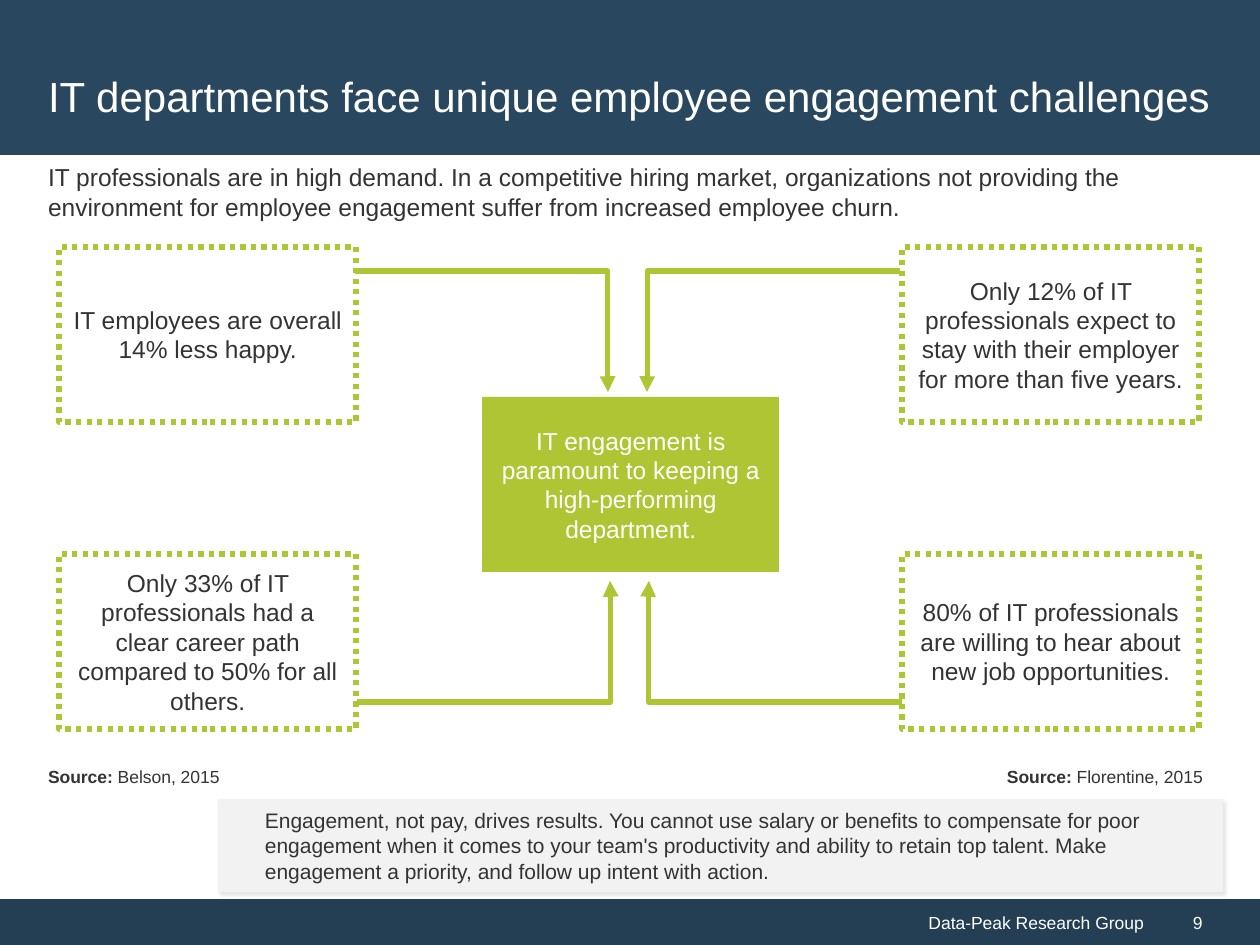
from dataclasses import dataclass
from typing import Optional

from lxml import etree
from pptx import Presentation
from pptx.dml.color import RGBColor
from pptx.enum.dml import MSO_LINE
from pptx.enum.shapes import MSO_CONNECTOR, MSO_SHAPE
from pptx.enum.text import MSO_ANCHOR, MSO_AUTO_SIZE, PP_ALIGN
from pptx.oxml.ns import qn
from pptx.util import Emu, Pt

RECTANGLE = MSO_SHAPE.RECTANGLE
ELBOW = MSO_CONNECTOR.ELBOW
DOTTED = MSO_LINE.ROUND_DOT
TOP, MIDDLE = MSO_ANCHOR.TOP, MSO_ANCHOR.MIDDLE
LEFT, CENTER, RIGHT = PP_ALIGN.LEFT, PP_ALIGN.CENTER, PP_ALIGN.RIGHT
NO_AUTOFIT = MSO_AUTO_SIZE.NONE

EMU_PER_PX = 914400 / 126
SLIDE_WIDTH, SLIDE_HEIGHT = 1260, 945
TITLE_ONLY_LAYOUT = 5
FONT = "Arial"
NAVY, DARK_NAVY, GREEN = "29475F", "243F54", "B0C534"
TEXT, WHITE, PALE_GRAY, BLACK = "333333", "FFFFFF", "F2F2F2", "000000"
LINE_WIDTH = 3
BOX_WIDTH, BOX_HEIGHT = 297, 175
INSET = 13


@dataclass
class Run:
    text: str
    bold: bool = False


@dataclass
class Box:
    left: int
    top: int
    width: int
    height: int
    runs: tuple[Run, ...] = ()
    size: int = 14
    color: str = TEXT
    fill: Optional[str] = None
    outline: Optional[str] = None
    align: PP_ALIGN = LEFT
    anchor: MSO_ANCHOR = MIDDLE
    left_inset: int = INSET


@dataclass
class Arrow:
    start: tuple[int, int]
    end: tuple[int, int]
    bend: int  # thousandths of a percent of the width


def px(length: int) -> Emu:
    return Emu(round(length * EMU_PER_PX))


def rgb(color: str) -> RGBColor:
    return RGBColor.from_string(color)


def place(shape, box: Box) -> None:
    shape.left, shape.top = px(box.left), px(box.top)
    shape.width, shape.height = px(box.width), px(box.height)


def write_text(shape, box: Box) -> None:
    frame = shape.text_frame
    frame.word_wrap = True
    frame.auto_size = NO_AUTOFIT
    frame.vertical_anchor = box.anchor
    frame.margin_left = px(box.left_inset)
    paragraph = frame.paragraphs[0]
    paragraph.alignment = box.align
    for item in box.runs:
        run = paragraph.add_run()
        run.text = item.text
        run.font.name = FONT
        run.font.size = Pt(box.size)
        run.font.bold = item.bold
        run.font.color.rgb = rgb(box.color)


def add_box(slide, box: Box):
    shape = slide.shapes.add_shape(
        RECTANGLE, px(box.left), px(box.top), px(box.width), px(box.height))
    shape.shadow.inherit = False
    if box.fill:
        shape.fill.solid()
        shape.fill.fore_color.rgb = rgb(box.fill)
    else:
        shape.fill.background()
    if box.outline:
        shape.line.color.rgb = rgb(box.outline)
        shape.line.width = Pt(LINE_WIDTH)
        shape.line.dash_style = DOTTED
    else:
        shape.line.fill.background()
    write_text(shape, box)
    return shape


def add_label(slide, box: Box) -> None:
    label = slide.shapes.add_textbox(
        px(box.left), px(box.top), px(box.width), px(box.height))
    write_text(label, box)


def add_arrow(slide, arrow: Arrow) -> None:
    connector = slide.shapes.add_connector(
        ELBOW, *(px(value) for value in arrow.start + arrow.end))
    connector.line.color.rgb = rgb(GREEN)
    connector.line.width = Pt(LINE_WIDTH)
    properties = connector.element.spPr
    line = properties.find(qn("a:ln"))
    etree.SubElement(line, qn("a:tailEnd"), type="triangle")
    etree.SubElement(properties, qn("a:effectLst"))
    adjustments = properties.find(qn("a:prstGeom")).find(qn("a:avLst"))
    etree.SubElement(adjustments, qn("a:gd"), name="adj1",
                     fmla=f"val {arrow.bend}")


def add_soft_shadow(shape) -> None:
    effects = shape.element.spPr.find(qn("a:effectLst"))
    shadow = etree.SubElement(effects, qn("a:outerShdw"), blurRad="25400",
                              dist="25400", dir="2700000", algn="tl",
                              rotWithShape="0")
    color = etree.SubElement(shadow, qn("a:srgbClr"), val=BLACK)
    etree.SubElement(color, qn("a:alpha"), val="10000")


def fact(left: int, top: int, text: str) -> Box:
    return Box(left, top, BOX_WIDTH, BOX_HEIGHT, (Run(text),),
               outline=GREEN, align=CENTER)


def source(left: int, width: int, name: str) -> Box:
    return Box(left, 760, width, 34, (Run("Source:", True), Run(f" {name}")),
               size=10, anchor=TOP)


TITLE_BAND = Box(0, 0, SLIDE_WIDTH, 155, fill=NAVY)
TITLE = Box(35, 35, 1210, 121,
            (Run("IT departments face unique employee engagement challenges"),),
            size=24, color=WHITE)
FOOTER = (
    Box(0, 899, 1156, 46, (Run("Data-Peak Research Group"),), size=10,
        color=WHITE, fill=DARK_NAVY, align=RIGHT),
    Box(1156, 899, 104, 46, (Run("9"),), size=10, color=WHITE,
        fill=DARK_NAVY, left_inset=37),
)
INTRO = Box(35, 156, 1188, 72, (Run(
    "IT professionals are in high demand. In a competitive hiring market, "
    "organizations not providing the environment for employee engagement "
    "suffer from increased employee churn."),), anchor=TOP)
ARROWS = (
    Arrow((357, 702), (610, 581), 100300),
    Arrow((355, 271), (608, 392), 99900),
    Arrow((900, 271), (647, 392), 99900),
    Arrow((902, 702), (649, 581), 100300),
)
FACTS = (
    fact(59, 554, "Only 33% of IT professionals had a clear career path "
                  "compared to 50% for all others."),
    fact(59, 247, "IT employees are overall 14% less happy."),
    fact(902, 554, "80% of IT professionals are willing to hear about "
                   "new job opportunities."),
    fact(902, 247, "Only 12% of IT professionals expect to stay with their "
                   "employer for more than five years. "),
)
CONCLUSION = Box(482, 397, BOX_WIDTH, BOX_HEIGHT, (Run(
    "IT engagement is paramount to keeping a high-performing department."),),
    color=WHITE, fill=GREEN, align=CENTER)
SOURCES = (source(35, 198, "Belson, 2015"),
           source(994, 229, "Florentine, 2015"))
CALLOUT = Box(218, 799, 1005, 93, (Run(
    "Engagement, not pay, drives results. You cannot use salary or benefits "
    "to compensate for poor engagement when it comes to your team's "
    "productivity and ability to retain top talent. Make engagement a "
    "priority, and follow up intent with action."),),
    size=12, fill=PALE_GRAY, left_inset=47)


def main() -> None:
    presentation = Presentation()
    presentation.slide_width = px(SLIDE_WIDTH)
    presentation.slide_height = px(SLIDE_HEIGHT)
    slide = presentation.slides.add_slide(
        presentation.slide_layouts[TITLE_ONLY_LAYOUT])

    # Title on its band, and footer
    title = slide.shapes.title
    place(title, TITLE)
    write_text(title, TITLE)
    for band in (*FOOTER, TITLE_BAND):
        title.element.addprevious(add_box(slide, band).element)

    # Four facts leading to the conclusion
    add_label(slide, INTRO)
    for arrow in ARROWS:
        add_arrow(slide, arrow)
    for box in (*FACTS, CONCLUSION):
        add_box(slide, box)

    # Sources and callout
    for label in SOURCES:
        add_label(slide, label)
    add_soft_shadow(add_box(slide, CALLOUT))

    presentation.save("out.pptx")


if __name__ == "__main__":
    main()
